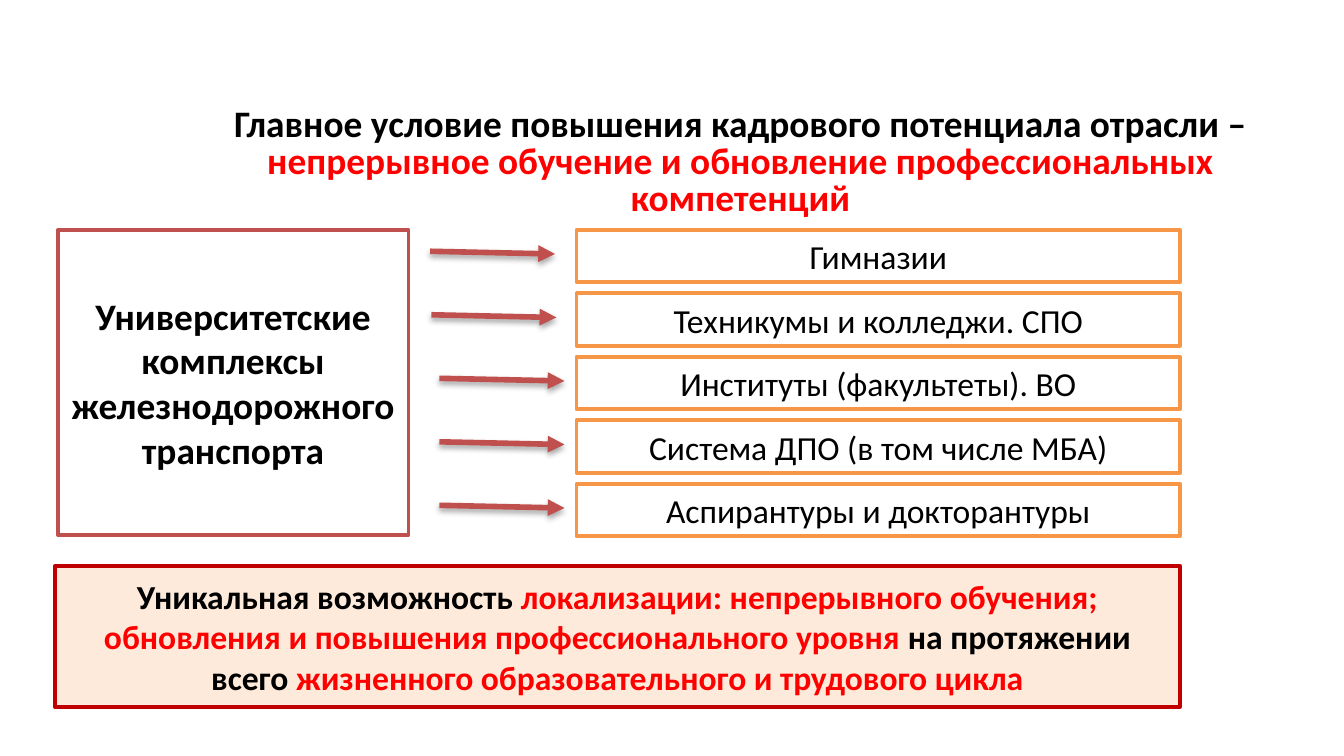
from dataclasses import dataclass
from typing import Optional

from lxml.etree import SubElement
from pptx import Presentation
from pptx.dml.color import RGBColor
from pptx.enum.shapes import MSO_CONNECTOR, MSO_SHAPE
from pptx.enum.text import MSO_ANCHOR, PP_ALIGN
from pptx.oxml.ns import qn
from pptx.util import Inches, Pt


@dataclass(frozen=True)
class Theme:
    font: str = "Calibri"
    large: int = 20
    normal: int = 18
    box_line: int = 2
    arrow_line: int = 3
    white: str = "FFFFFF"
    black: str = "000000"
    red: str = "FF0000"
    dark_red: str = "C00000"
    brick: str = "C0504D"
    orange: str = "F79646"
    peach: str = "FDEADA"


THEME = Theme()


@dataclass(frozen=True)
class Span:
    text: str
    color: str = THEME.black


@dataclass(frozen=True)
class Box:
    left: float
    top: float
    width: float
    height: float
    paragraphs: list[list[Span]]
    line: str
    fill: str = THEME.white
    size: int = THEME.normal
    bold: bool = True
    spacing: Optional[int] = None
    side_inset: float = 0.1


def draw_box(page, box: Box) -> None:
    shape = page.shapes.add_shape(
        MSO_SHAPE.RECTANGLE, Inches(box.left), Inches(box.top),
        Inches(box.width), Inches(box.height))
    shape.shadow.inherit = False
    shape.fill.solid()
    shape.fill.fore_color.rgb = RGBColor.from_string(box.fill)
    shape.line.color.rgb = RGBColor.from_string(box.line)
    shape.line.width = Pt(THEME.box_line)
    frame = shape.text_frame
    frame.word_wrap = True
    frame.vertical_anchor = MSO_ANCHOR.MIDDLE
    frame.margin_left = frame.margin_right = Inches(box.side_inset)
    for index, spans in enumerate(box.paragraphs):
        para = frame.add_paragraph() if index else frame.paragraphs[0]
        para.alignment = PP_ALIGN.CENTER
        if box.spacing:
            para.line_spacing = Pt(box.spacing)
        for span in spans:
            run = para.add_run()
            run.text = span.text
            run.font.name = THEME.font
            run.font.size = Pt(box.size)
            run.font.bold = box.bold
            run.font.color.rgb = RGBColor.from_string(span.color)


def draw_arrow(page, left: float, top: float) -> None:
    """Draw a slightly falling arrow with a soft shadow below it."""
    arrow = page.shapes.add_connector(
        MSO_CONNECTOR.STRAIGHT, Inches(left), Inches(top),
        Inches(left + ARROW_WIDTH), Inches(top + ARROW_DROP))
    arrow.line.color.rgb = RGBColor.from_string(THEME.brick)
    arrow.line.width = Pt(THEME.arrow_line)
    properties = arrow.element.spPr
    SubElement(properties.find(qn("a:ln")), qn("a:tailEnd"), type="triangle")
    effects = SubElement(properties, qn("a:effectLst"))
    shadow = SubElement(effects, qn("a:outerShdw"), blurRad=str(Pt(3.1)),
                        dist=str(Pt(1.8)), dir="5400000", rotWithShape="0")
    color = SubElement(shadow, qn("a:srgbClr"), val=THEME.black)
    SubElement(color, qn("a:alpha"), val="35000")


LEVELS = [
    "Гимназии",
    "Техникумы и колледжи. СПО",
    "Институты (факультеты). ВО",
    "Система ДПО (в том числе МБА)",
    "Аспирантуры и докторантуры",
]
FIRST_ROW, LAST_ROW = 1.71, 3.6
ROW_STEP = (LAST_ROW - FIRST_ROW) / (len(LEVELS) - 1)
ARROW_TOP, ARROW_WIDTH, ARROW_DROP = 1.87, 0.93, 0.02
ARROW_LEFTS = [3.2, 3.21, 3.27, 3.27, 3.27]
TITLE = Box(1.22, 0.8, 8.58, 0.83, [
    [Span("Главное условие повышения кадрового потенциала отрасли –")],
    [Span("непрерывное обучение и обновление профессиональных компетенций", THEME.red)],
], THEME.white, size=THEME.large, spacing=20)
UNIVERSITIES = Box(0.43, 1.71, 2.61, 2.27, [
    [Span(word)] for word in
    ("Университетские", "комплексы", "железнодорожного", "транспорта")
], THEME.brick, size=THEME.large, side_inset=0.05)
CONCLUSION = Box(0.41, 4.21, 8.37, 1.05, [
    [Span("Уникальная возможность "),
     Span("локализации: непрерывного обучения; обновления и повышения "
          "профессионального уровня ", THEME.red),
     Span("на протяжении")],
    [Span("всего "),
     Span("жизненного образовательного и трудового цикла", THEME.red)],
], THEME.dark_red, fill=THEME.peach)


def main() -> None:
    deck = Presentation()
    deck.slide_width, deck.slide_height = Inches(10), Inches(10 * 9 / 16)
    page = deck.slides.add_slide(deck.slide_layouts[6])
    draw_box(page, TITLE)
    draw_box(page, UNIVERSITIES)
    for index, level in enumerate(LEVELS):
        draw_box(page, Box(4.29, FIRST_ROW + index * ROW_STEP, 4.49, 0.39,
                           [[Span(level)]], THEME.orange, bold=False))
    for index, left in enumerate(ARROW_LEFTS):
        draw_arrow(page, left, ARROW_TOP + index * ROW_STEP)
    draw_box(page, CONCLUSION)
    deck.save("out.pptx")


if __name__ == "__main__":
    main()
